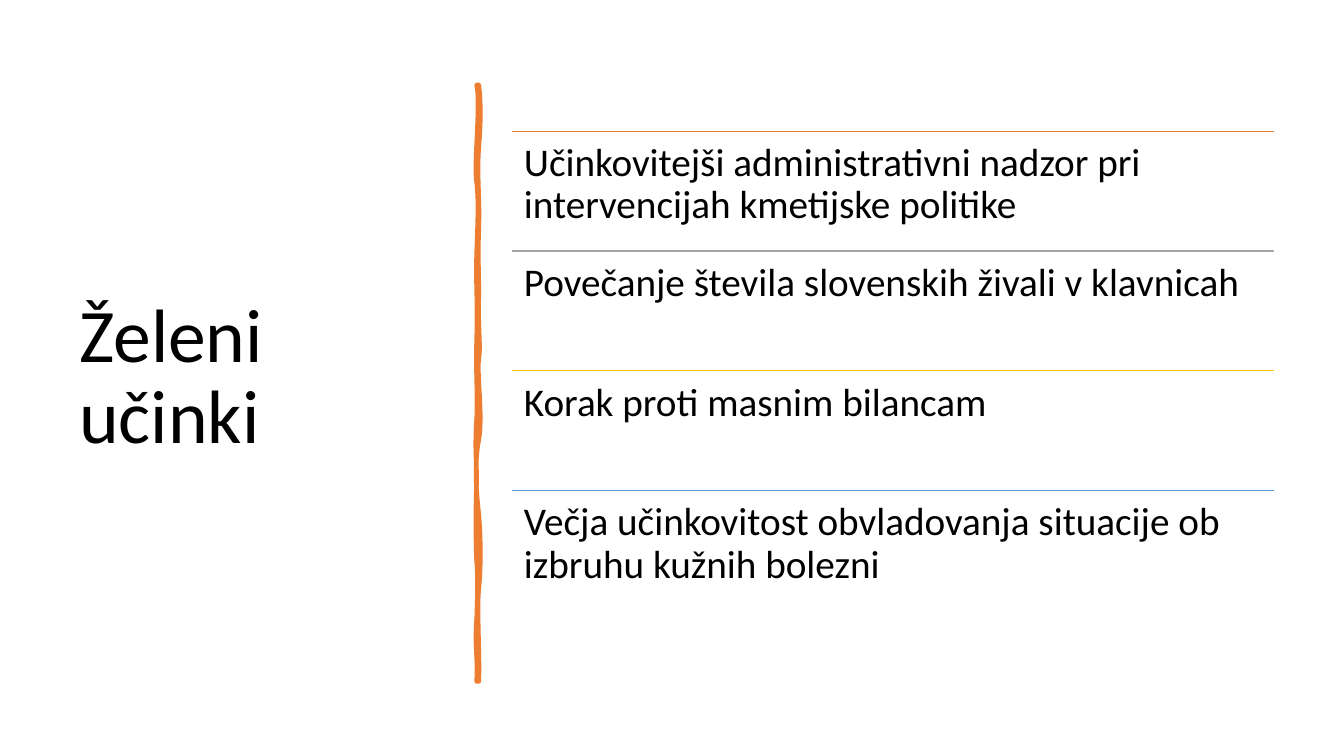
from lxml.etree import SubElement
from pptx import Presentation
from pptx.dml.color import RGBColor
from pptx.enum.shapes import MSO_CONNECTOR
from pptx.enum.text import MSO_ANCHOR
from pptx.oxml.ns import qn
from pptx.util import Pt

PX = 9525  # 96 px to the inch
FONT = "Calibri"
BLACK = RGBColor(0x00, 0x00, 0x00)
ORANGE = RGBColor(0xED, 0x7D, 0x31)
GREY = RGBColor(0xA5, 0xA5, 0xA5)
GOLD = RGBColor(0xFF, 0xC0, 0x00)
BLUE = RGBColor(0x5B, 0x9B, 0xD5)

EFFECTS = [
    ("Učinkovitejši administrativni nadzor pri intervencijah kmetijske politike", ORANGE),
    ("Povečanje števila slovenskih živali v klavnicah", GREY),
    ("Korak proti masnim bilancam", GOLD),
    ("Večja učinkovitost obvladovanja situacije ob izbruhu kužnih bolezni", BLUE),
]

# Hand-drawn bar on a 2 by 592 grid: a start point,
# then two control points and an end per curve
BAR_GRID = (2, 592)
BAR_STROKE = [
    (2, 0),
    (4, 18), (4, 35), (2, 62), (0, 89), (3, 111), (2, 142),
    (1, 173), (2, 178), (2, 210), (1, 241), (4, 258), (2, 272),
    (0, 286), (6, 330), (2, 352), (-2, 373), (-1, 400), (2, 426),
    (4, 452), (4, 480), (2, 500), (0, 519), (3, 566), (2, 592),
    (1, 592), (0, 592), (0, 592), (1, 562), (-2, 560), (0, 529),
    (1, 499), (1, 486), (0, 473), (-1, 460), (-1, 411), (0, 393),
    (0, 375), (-2, 361), (0, 331), (1, 302), (-1, 289), (0, 251),
    (1, 214), (-1, 197), (0, 166), (1, 134), (2, 116), (0, 97),
    (-3, 79), (4, 20), (0, 0), (1, 0), (1, 0), (2, 0),
]
BAR_FILL = [
    (2, 0),
    (2, 31), (-1, 41), (2, 68), (4, 95), (1, 113), (2, 124),
    (3, 136), (1, 171), (2, 210), (3, 249), (0, 259), (2, 278),
    (4, 297), (4, 313), (2, 346), (-1, 379), (2, 390), (2, 432),
    (2, 473), (1, 469), (2, 494), (3, 519), (1, 563), (2, 592),
    (1, 591), (0, 591), (0, 592), (-3, 565), (1, 548), (0, 529),
    (-1, 511), (2, 485), (0, 455), (-2, 426), (3, 416), (0, 387),
    (-3, 358), (4, 336), (0, 302), (-4, 267), (1, 241), (0, 216),
    (-2, 191), (-2, 175), (0, 154), (1, 132), (1, 101), (0, 80),
    (-2, 59), (2, 37), (0, 0), (1, 0), (1, 0), (2, 0),
]


def add_text(shapes, text, x, y, w, h, size, anchor=MSO_ANCHOR.TOP, inset=None, after=0):
    tb = shapes.add_textbox(x * PX, y * PX, w * PX, h * PX)
    tf = tb.text_frame
    tf.word_wrap = True
    tf.vertical_anchor = anchor
    if inset is not None:
        tf.margin_left = tf.margin_right = tf.margin_top = tf.margin_bottom = inset * PX
    p = tf.paragraphs[0]
    p.line_spacing = 0.9
    p.space_after = Pt(after)
    r = p.add_run()
    r.text = text
    r.font.name = FONT
    r.font.size = Pt(size)
    r.font.color.rgb = BLACK


def add_curve_path(path_list, points, **flags):
    """Add a closed path of cubic curves, laid on its side."""
    across, along = BAR_GRID
    path = SubElement(path_list, qn("a:path"), w=str(along), h=str(across), **flags)

    def add_step(tag, step_points):
        step = SubElement(path, qn(tag))
        for dx, dy in step_points:
            SubElement(step, qn("a:pt"), x=str(dy), y=str(across - dx))

    add_step("a:moveTo", points[:1])
    for i in range(1, len(points), 3):
        add_step("a:cubicBezTo", points[i:i + 3])
    SubElement(path, qn("a:close"))


def add_bar(shapes, x, y, w, h):
    # The frame lies flat and is turned upright
    builder = shapes.build_freeform(0, 0, scale=PX)
    builder.add_line_segments([(w, 0), (w, h), (0, h)])
    sp = builder.convert_to_shape(x * PX, y * PX)
    sp.rotation = 90
    sp.shadow.inherit = False
    sp.fill.solid()
    sp.fill.fore_color.rgb = ORANGE
    sp.line.color.rgb = ORANGE
    sp.line.width = Pt(3.25)
    SubElement(sp.line._get_or_add_ln(), qn("a:round"))
    # Curved stroke and body
    path_list = sp._element.spPr.find(".//" + qn("a:pathLst"))
    path_list.remove(path_list[0])
    add_curve_path(path_list, BAR_STROKE, fill="none")
    add_curve_path(path_list, BAR_FILL, stroke="0")


def add_rule(shapes, x, y, w, color):
    rule = shapes.add_connector(MSO_CONNECTOR.STRAIGHT, x * PX, y * PX, (x + w) * PX, y * PX)
    rule.line.color.rgb = color
    rule.line.width = Pt(1)
    SubElement(rule._element.spPr, qn("a:effectLst"))


def add_effects(shapes, x, y, w, h):
    row_h = h // len(EFFECTS)
    for i, (text, color) in enumerate(EFFECTS):
        top = y + i * row_h
        add_rule(shapes, x, top, w, color)
        add_text(shapes, text, x, top, w, row_h, 28, inset=11, after=10)


def main():
    prs = Presentation()
    prs.slide_width, prs.slide_height = 1280 * PX, 720 * PX
    s = prs.slides.add_slide(prs.slide_layouts[6])
    add_text(s.shapes, "Želeni učinki", 66, 67, 359, 587, 54, anchor=MSO_ANCHOR.MIDDLE)
    add_bar(s.shapes, 171, 364, 568, 2)
    add_effects(s.shapes.add_group_shape().shapes, 488, 125, 725, 456)
    prs.save("out.pptx")


if __name__ == "__main__":
    main()
